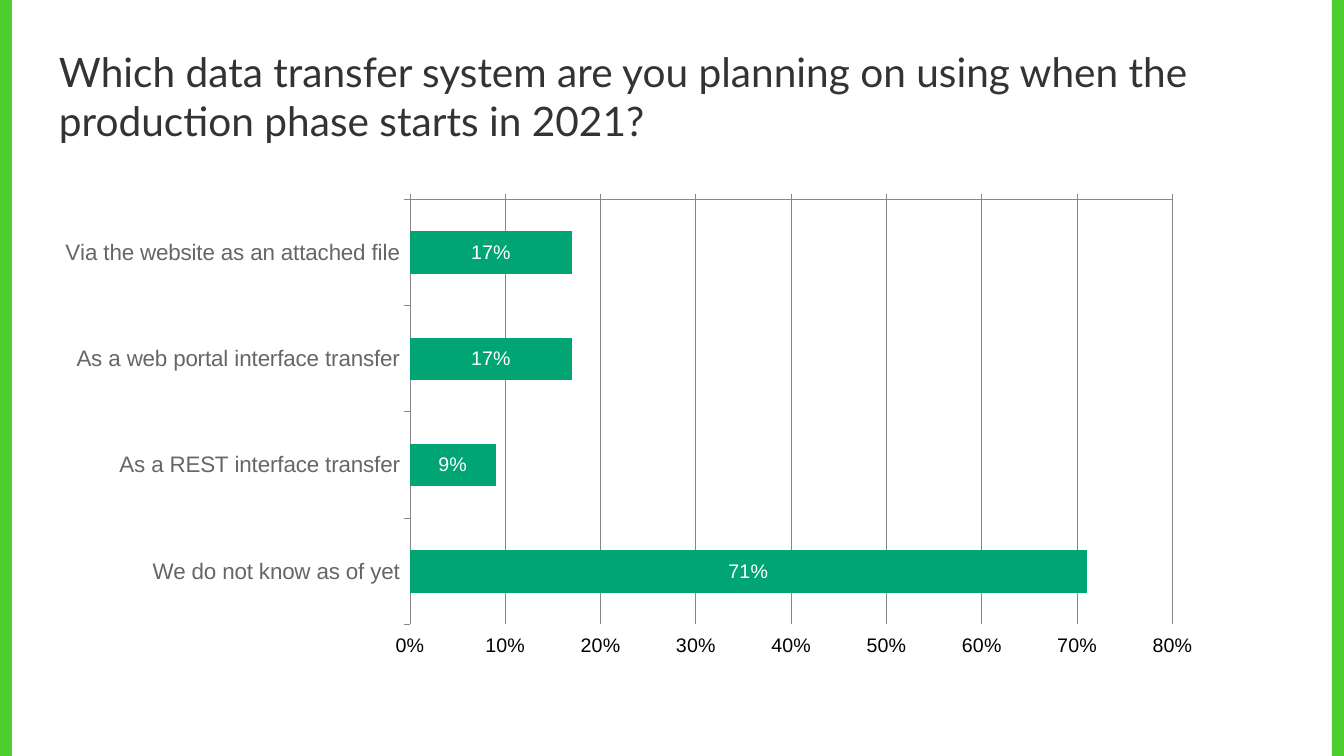
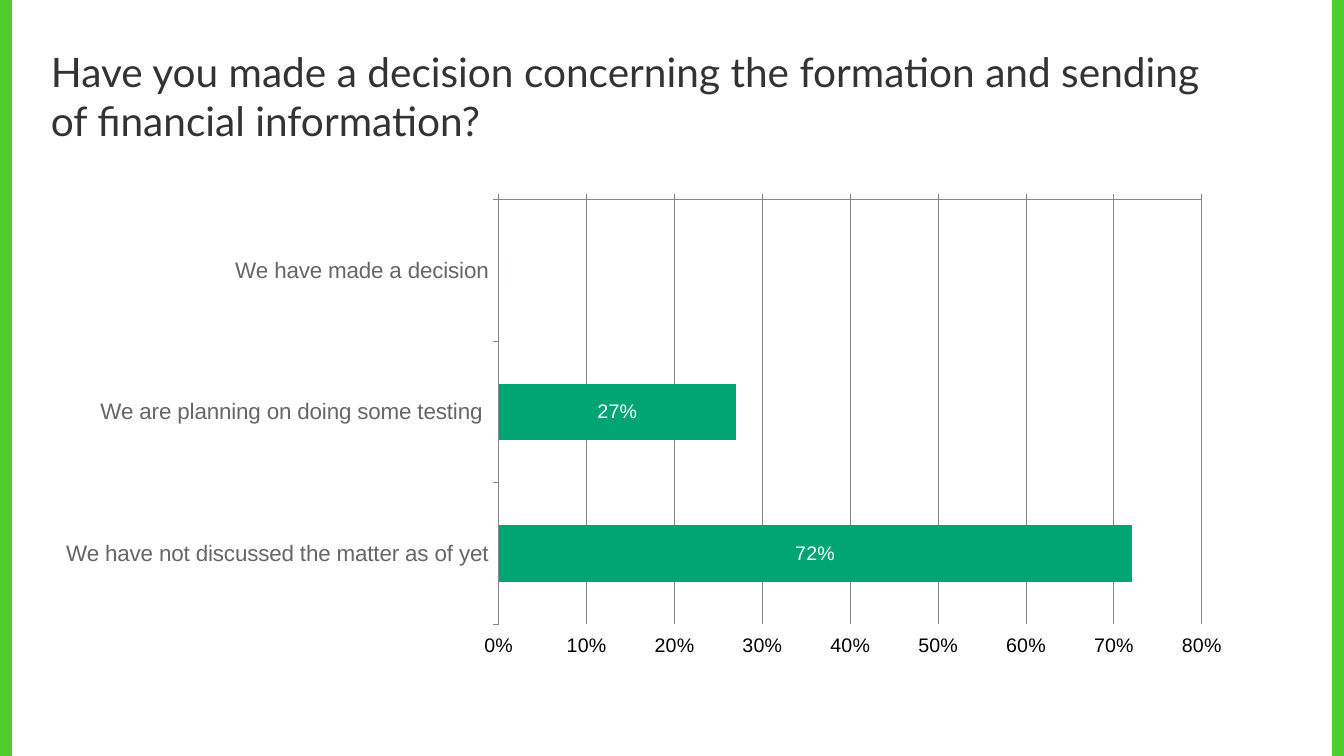
from pptx import Presentation
from pptx.chart.data import CategoryChartData
from pptx.dml.color import RGBColor
from pptx.enum.chart import XL_CHART_TYPE, XL_LABEL_POSITION, XL_TICK_LABEL_POSITION, XL_TICK_MARK
from pptx.enum.shapes import MSO_SHAPE
from pptx.enum.text import MSO_ANCHOR, MSO_AUTO_SIZE
from pptx.util import Emu, Pt

RECT = MSO_SHAPE.RECTANGLE
BAR = XL_CHART_TYPE.BAR_CLUSTERED
CENTER = XL_LABEL_POSITION.CENTER
LOW, HIGH = XL_TICK_LABEL_POSITION.LOW, XL_TICK_LABEL_POSITION.HIGH
OUTSIDE, NO_TICK = XL_TICK_MARK.OUTSIDE, XL_TICK_MARK.NONE
MIDDLE = MSO_ANCHOR.MIDDLE
FIT_SHAPE = MSO_AUTO_SIZE.SHAPE_TO_FIT_TEXT

SLIDE_W, SLIDE_H = 1344, 756
EMU_PER_PX = 6858000 / SLIDE_H
BAND_W = 12
TITLE_TOP, TITLE_H = 42, 108
CHART_LEFT, CHART_TOP, CHART_H = 42, 190, 476

COLORS = {
    "band": "4DCE2E",
    "title": "333333",
    "bar": "00A573",
    "category": "666666",
    "axis": "878787",
    "text": "000000",
    "white": "FFFFFF",
}

QUESTIONS = [
    {
        "title": "Which data transfer system are you planning on using when the "
                 "production phase starts in 2021?",
        "title_left": 49,
        "width": 1174,
        "answers": {
            "Via the website as an attached file": 0.17,
            "As a web portal interface transfer": 0.17,
            "As a REST interface transfer": 0.09,
            "We do not know as of yet": 0.71,
        },
    },
    {
        "title": "Have you made a decision concerning the formation and sending "
                 "of financial information?",
        "title_left": 41,
        "width": 1204,
        "answers": {
            "We have made a decision": 0,
            "We are planning on doing some testing ": 0.27,
            "We have not discussed the matter as of yet": 0.72,
        },
    },
]


def px(*lengths):
    """Turn pixel lengths into a list of EMU lengths."""
    return [Emu(round(n * EMU_PER_PX)) for n in lengths]


def color(name):
    return RGBColor.from_string(COLORS[name])


def style_font(font, name, size, color_name):
    font.name = name
    font.size = Pt(size)
    font.color.rgb = color(color_name)


def add_bands(s):
    for left in (0, SLIDE_W - BAND_W):
        sp = s.shapes.add_shape(RECT, *px(left, 0, BAND_W, SLIDE_H))
        sp.shadow.inherit = False
        sp.fill.solid()
        sp.fill.fore_color.rgb = color("band")
        sp.line.fill.background()


def add_title(s, text, left, right):
    sp = s.shapes.add_textbox(*px(left, TITLE_TOP, right - left, TITLE_H))
    tf = sp.text_frame
    tf.word_wrap = True
    tf.auto_size = FIT_SHAPE
    tf.vertical_anchor = MIDDLE
    tf.text = text
    style_font(tf.paragraphs[0].runs[0].font, "Lato", 29, "title")


def style_axis(axis, label_position, size, color_name):
    axis.major_tick_mark = OUTSIDE
    axis.minor_tick_mark = NO_TICK
    axis.tick_label_position = label_position
    axis.format.line.color.rgb = color("axis")
    style_font(axis.tick_labels.font, "Arial", size, color_name)


def add_bar_chart(s, answers, width):
    data = CategoryChartData(number_format="0%")
    data.categories = list(answers)
    data.add_series("Series 1", list(answers.values()))
    frame = s.shapes.add_chart(BAR, *px(CHART_LEFT, CHART_TOP, width, CHART_H), data)
    chart = frame.chart
    chart.has_legend = False
    chart.has_title = False
    style_font(chart.font, "Arial", 14, "text")

    style_axis(chart.category_axis, LOW, 16, "category")
    chart.category_axis.reverse_order = True

    values = chart.value_axis
    style_axis(values, HIGH, 14, "text")
    values.minimum_scale, values.maximum_scale, values.major_unit = 0, 0.8, 0.1
    values.has_major_gridlines = True
    values.major_gridlines.format.line.color.rgb = color("axis")
    values.tick_labels.number_format = "0%"
    values.tick_labels.number_format_is_linked = False

    plot = chart.plots[0]
    plot.gap_width = 150
    plot.vary_by_categories = False
    fill = plot.series[0].format.fill
    fill.solid()
    fill.fore_color.rgb = color("bar")

    plot.has_data_labels = True
    labels = plot.data_labels
    labels.show_value = True
    labels.position = CENTER
    labels.number_format = "0%;;"  # zero gets no label
    labels.number_format_is_linked = False
    style_font(labels.font, "Arial", 14, "white")


def main():
    prs = Presentation()
    prs.slide_width, prs.slide_height = px(SLIDE_W, SLIDE_H)
    for question in QUESTIONS:
        s = prs.slides.add_slide(prs.slide_layouts[6])
        add_bands(s)
        add_title(s, question["title"], question["title_left"],
                  CHART_LEFT + question["width"])
        add_bar_chart(s, question["answers"], question["width"])
    prs.save("out.pptx")


if __name__ == "__main__":
    main()
